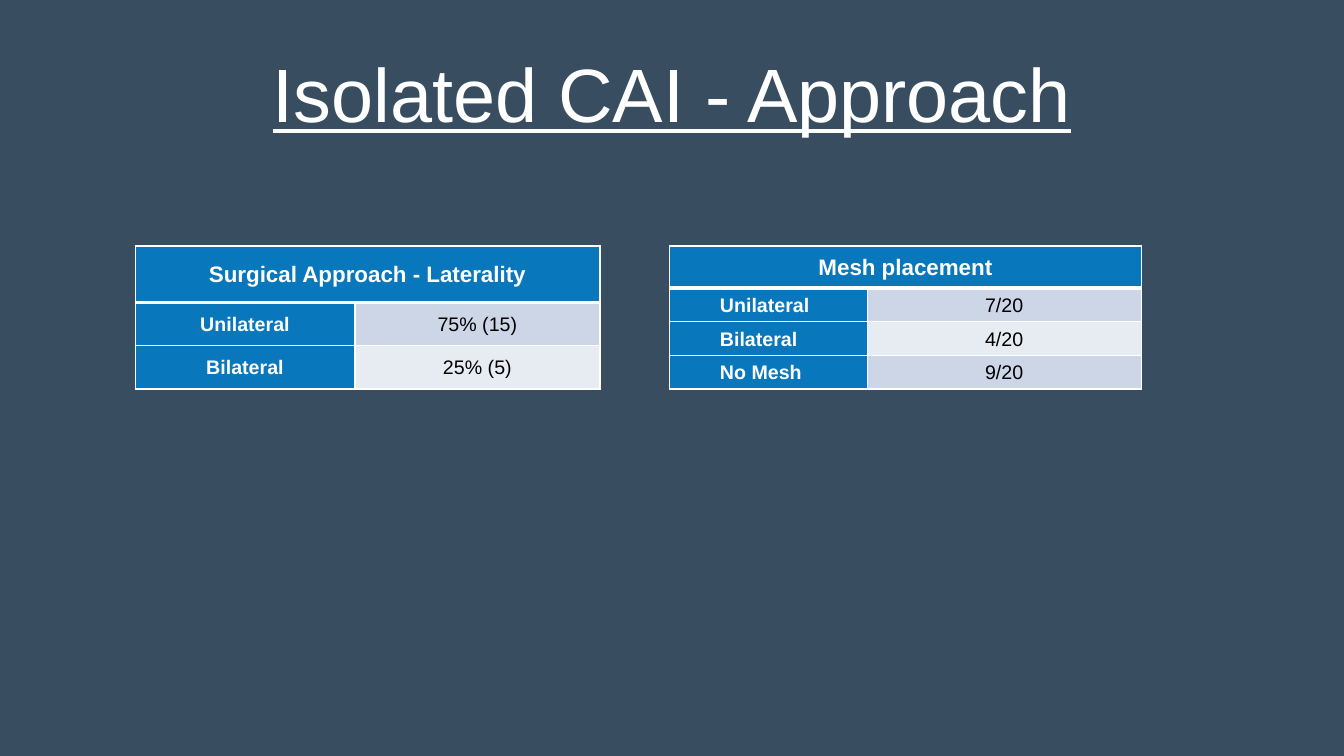
import pptx
import pptx.util
import pptx.dml.color
import pptx.enum.text
import pptx.oxml
import pptx.oxml.ns

Inches = pptx.util.Inches
Align = pptx.enum.text.PP_ALIGN
Anchor = pptx.enum.text.MSO_ANCHOR

WHITE, BLACK = "FFFFFF", "000000"
SLATE, BLUE = "384D60", "0877BC"
BANDS = ["CCD6E7", "E7ECF3"]


def color(code):
    return pptx.dml.color.RGBColor.from_string(code)


def write(frame, text, size=14, ink=WHITE, bold=False, line=False,
          align=Align.CENTER, lead=1.07):
    para = frame.paragraphs[0]
    para.alignment = align
    para.line_spacing = lead
    run = para.add_run()
    run.text = text
    font = run.font
    font.name = "Arial"
    font.size = pptx.util.Pt(size)
    font.bold = bold
    font.underline = line
    font.color.rgb = color(ink)


def edge(cell, base=1):
    """Draw white borders, with the bottom one base points wide."""
    props = cell._tc.get_or_add_tcPr()
    for side, width in zip("LRTB", (1, 1, 1, base)):
        props.append(pptx.oxml.parse_xml(
            f'<a:ln{side} {pptx.oxml.ns.nsdecls("a")} w="{pptx.util.Pt(width)}">'
            f'<a:solidFill><a:srgbClr val="{WHITE}"/></a:solidFill></a:ln{side}>'))


def style(cell, fill, base=1, left=0.07):
    edge(cell, base)
    cell.fill.solid()
    cell.fill.fore_color.rgb = color(fill)
    cell.vertical_anchor = Anchor.MIDDLE
    cell.margin_left, cell.margin_right = Inches(left), Inches(0.07)
    cell.margin_top = cell.margin_bottom = 0


def add_title(slide, box, text):
    frame = slide.shapes.add_textbox(*map(Inches, box)).text_frame
    frame.word_wrap = True
    frame.vertical_anchor = Anchor.MIDDLE
    write(frame, text, size=54, line=True, lead=0.9)


def add_grid(slide, box, head, rows, split, top, align=Align.CENTER, left=0.07):
    """Place a table whose first column is split wide and header top high."""
    width, height = box[2:]
    grid = slide.shapes.add_table(len(rows) + 1, 2, *map(Inches, box)).table
    grid.columns[0].width = Inches(split)
    grid.columns[1].width = Inches(width - split)
    grid.rows[0].height = Inches(top)
    for cell in grid.rows[0].cells:
        style(cell, BLUE, base=3)
    first = grid.cell(0, 0)
    first.merge(grid.cell(0, 1))
    write(first.text_frame, head, size=16, bold=True)

    for i, (label, value) in enumerate(rows):
        row = grid.rows[i + 1]
        row.height = Inches((height - top) / len(rows))
        name, count = row.cells
        style(name, BLUE, left=left)
        write(name.text_frame, label, bold=True, align=align)
        style(count, BANDS[i % 2])
        write(count.text_frame, value, ink=BLACK)


def main():
    deck = pptx.Presentation()
    deck.slide_width, deck.slide_height = Inches(13.33), Inches(7.5)
    slide = deck.slides.add_slide(deck.slide_layouts[6])
    back = slide.background.fill
    back.solid()
    back.fore_color.rgb = color(SLATE)

    add_title(slide, (0, 0.25, 13.33, 1.45), "Isolated CAI - Approach")
    add_grid(slide, (1.34, 2.44, 4.61, 1.42), "Surgical Approach - Laterality",
             [("Unilateral", "75% (15)"), ("Bilateral", "25% (5)")],
             split=2.18, top=0.56)
    add_grid(slide, (6.64, 2.44, 4.68, 1.42), "Mesh placement",
             [("Unilateral", "7/20"), ("Bilateral", "4/20"), ("No Mesh", "9/20")],
             split=1.96, top=0.42, align=Align.LEFT, left=0.5)
    deck.save("out.pptx")


if __name__ == "__main__":
    main()
